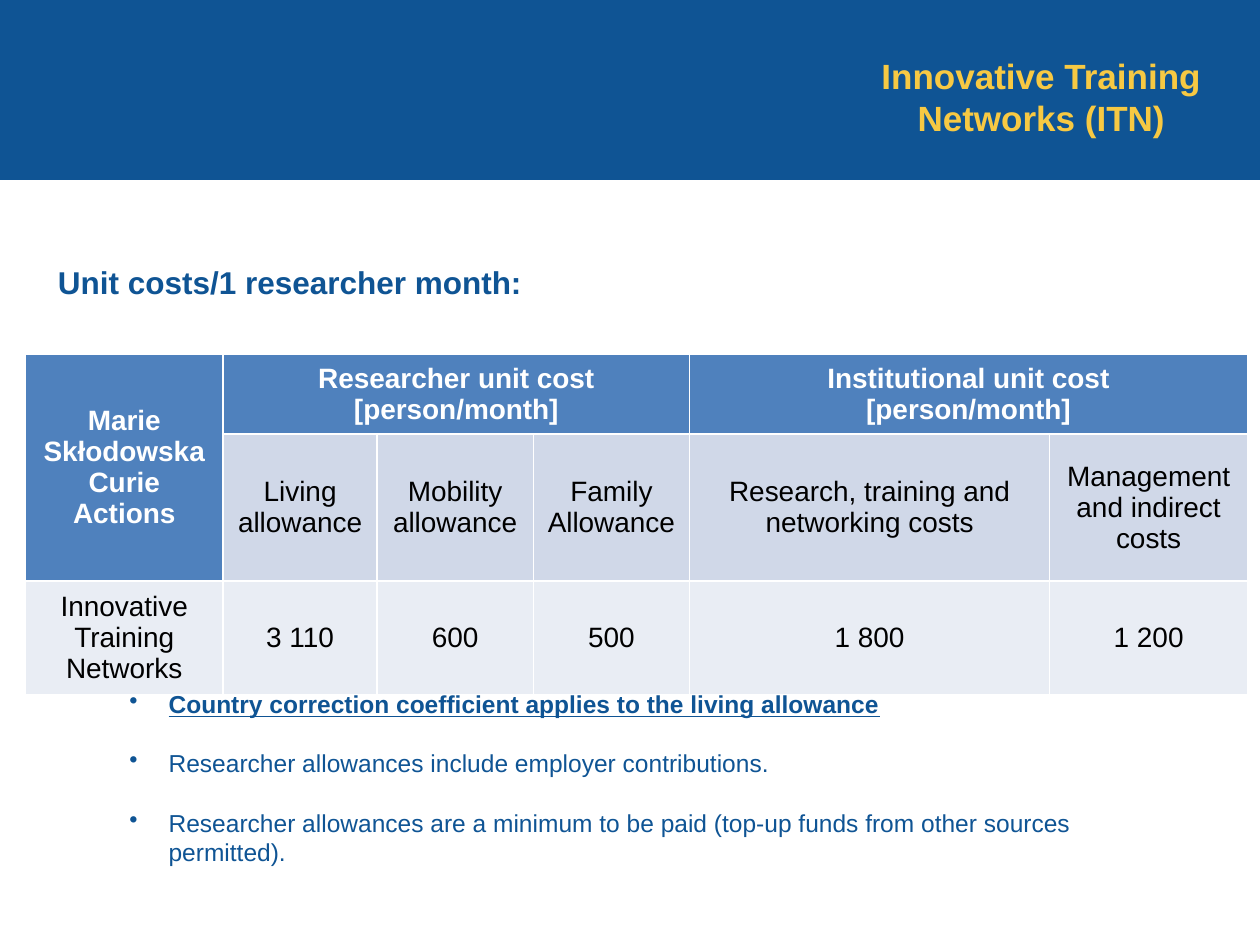
import pptx
import pptx.dml.color
import pptx.enum.shapes
import pptx.enum.text
import pptx.util
from lxml import etree

Cm = pptx.util.Cm
MIDDLE = pptx.enum.text.MSO_ANCHOR.MIDDLE
CENTER = pptx.enum.text.PP_ALIGN.CENTER

THEME = {
    "font": "Arial",
    "blue": "0F5494", "yellow": "F7C943", "white": "FFFFFF", "black": "000000",
    "header": "4F81BD", "label": "D0D8E8", "value": "E9EDF4",
    "title": 20, "heading": 18, "table": 16, "notes": 14,
}


def color(key):
    return pptx.dml.color.RGBColor.from_string(THEME[key])


def style(paragraph, size, color_key, **extras):
    font_values = {"name": THEME["font"], "size": pptx.util.Pt(THEME[size]), "bold": False}
    for name, value in (font_values | extras).items():
        setattr(paragraph.font, name, value)
    paragraph.font.color.rgb = color(color_key)


deck = pptx.Presentation()
deck.slide_width, deck.slide_height = Cm(25.4), Cm(19.05)
slide = deck.slides.add_slide(deck.slide_layouts[5])

# Title on its band
title = slide.shapes.title
title.left, title.top, title.width, title.height = Cm(16.89), Cm(0.97), Cm(8.2), Cm(1.96)
title.text_frame.text = "Innovative Training Networks (ITN)"
title.text_frame.vertical_anchor = MIDDLE
title.text_frame.auto_size = pptx.enum.text.MSO_AUTO_SIZE.SHAPE_TO_FIT_TEXT
title.text_frame.paragraphs[0].alignment = CENTER
style(title.text_frame.paragraphs[0], "title", "yellow", bold=True)

band = slide.shapes.add_shape(
    pptx.enum.shapes.MSO_SHAPE.RECTANGLE, 0, Cm(-0.1), deck.slide_width, Cm(3.73))
band.shadow.inherit = False
band.fill.solid()
band.fill.fore_color.rgb = color("blue")
band.line.fill.background()
title.element.addprevious(band.element)

# Unit cost table; None marks a cell covered by a merge
rows = [
    ["Marie Skłodowska Curie Actions", "Researcher unit cost\n[person/month]", None, None,
     "Institutional unit cost\n[person/month]", None],
    [None, "Living allowance", "Mobility allowance", "Family Allowance",
     "Research, training and networking costs", "Management and indirect costs"],
    ["Innovative Training Networks", "3 110", "600", "500", "1 800", "1 200"],
]
column_widths = [3.99, 3.1, 3.15, 3.15, 7.26, 3.99]
row_heights = [1.5, 2.13, 2.13]
merges = [((0, 0), (1, 0)), ((0, 1), (0, 3)), ((0, 4), (0, 5))]

costs_frame = slide.shapes.add_table(
    len(rows), len(column_widths), Cm(0.51), Cm(7.14), Cm(24.64), Cm(6.17))
costs = costs_frame.table
for column, width in zip(costs.columns, column_widths):
    column.width = Cm(width)
for row, height in zip(costs.rows, row_heights):
    row.height = Cm(height)
costs_frame.height = Cm(6.17)
for first, last in merges:
    costs.cell(*first).merge(costs.cell(*last))

for r, texts in enumerate(rows):
    for c, text in enumerate(texts):
        cell = costs.cell(r, c)
        is_header = r == 0 or text is None
        cell.fill.solid()
        cell.fill.fore_color.rgb = color("header" if is_header else ("label", "value")[r - 1])
        if text is None:
            continue
        cell.vertical_anchor = MIDDLE
        cell.text_frame.text = text
        for paragraph in cell.text_frame.paragraphs:
            paragraph.alignment = CENTER
            style(paragraph, "table", "white" if is_header else "black", bold=is_header)

# Heading above the table
heading = slide.shapes.add_textbox(Cm(1.17), Cm(5.31), Cm(23.42), Cm(1.12)).text_frame
heading.word_wrap = True
for side in ("left", "top", "right", "bottom"):
    setattr(heading, f"margin_{side}", 0)
heading.text = "Unit costs/1 researcher month:"
style(heading.paragraphs[0], "heading", "blue", bold=True)

# Bulleted notes below the table
notes = slide.shapes.add_textbox(Cm(2.36), Cm(13.77), Cm(21.54), Cm(3.84)).text_frame
notes.word_wrap = True
notes.text = "\n".join([
    "Country correction coefficient applies to the living allowance",
    "Researcher allowances include employer contributions.",
    "Researcher allowances are a minimum to be paid"
    " (top-up funds from other sources permitted).",
])
for i, note in enumerate(notes.paragraphs):
    if i:
        note.space_before = pptx.util.Pt(17)
    properties = note._p.get_or_add_pPr()
    properties.set("marL", str(Cm(0.79)))
    properties.set("indent", str(Cm(-0.79)))
    bullet = etree.SubElement(properties, pptx.oxml.ns.qn("a:buChar"))
    bullet.set("char", "•")
    style(note, "notes", "blue", bold=i == 0, underline=i == 0)

deck.save("out.pptx")
